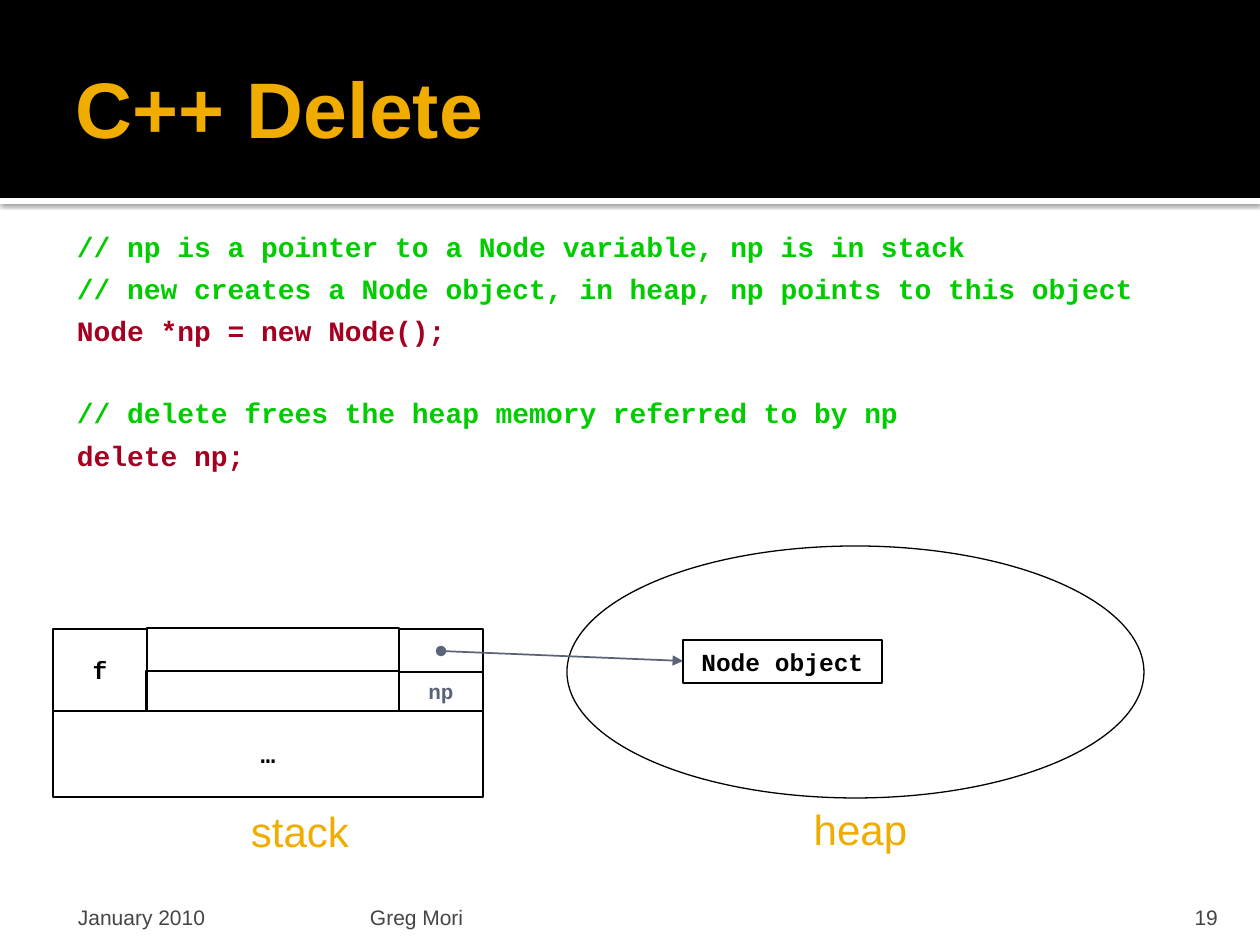
from dataclasses import dataclass
from typing import Optional

import pptx
import pptx.dml.color
import pptx.enum.shapes
import pptx.enum.text
import pptx.oxml
import pptx.oxml.ns
import pptx.util

PX = 914400 / 126
SHAPE = pptx.enum.shapes.MSO_SHAPE
ALIGN = pptx.enum.text.PP_ALIGN
ANCHOR = pptx.enum.text.MSO_ANCHOR
NS = pptx.oxml.ns.nsdecls("a")


@dataclass(frozen=True)
class Theme:
    black: str = "000000"
    white: str = "FFFFFF"
    gold: str = "F0AD00"
    slate: str = "5A6378"
    grey: str = "454545"
    comment: str = "00CC00"
    code: str = "A50021"
    sans: str = "Arial"
    mono: str = "Courier New"
    title_size: int = 45
    label_size: int = 24
    code_size: int = 16
    cell_size: int = 14
    small_size: int = 12


THEME = Theme()


@dataclass(frozen=True)
class Area:
    left: int
    top: int
    width: int
    height: int

    def emu(self) -> list:
        return [px(n) for n in (self.left, self.top, self.width, self.height)]


@dataclass(frozen=True)
class Style:
    size: int
    color: str
    font: str = THEME.sans
    bold: bool = False


@dataclass(frozen=True)
class Cell:
    area: Area
    text: str = ""
    style: Style = Style(THEME.cell_size, THEME.black, THEME.mono, True)
    fill: Optional[str] = None
    kind: SHAPE = SHAPE.RECTANGLE


@dataclass(frozen=True)
class Label:
    area: Area
    text: str
    style: Style
    align: ALIGN = ALIGN.LEFT
    anchor: ANCHOR = ANCHOR.TOP
    insets: tuple = (13, 6, 13, 6)


@dataclass(frozen=True)
class CodeLine:
    text: str
    color: str
    before: float = 0


def px(count: int) -> int:
    return round(count * PX)


def rgb(value: str) -> pptx.dml.color.RGBColor:
    return pptx.dml.color.RGBColor.from_string(value)


def add_span(para, text: str, style: Style) -> None:
    span = para.add_run()
    span.text = text
    span.font.size = pptx.util.Pt(style.size)
    span.font.name = style.font
    span.font.bold = style.bold
    span.font.color.rgb = rgb(style.color)


def set_frame(box, insets: tuple, anchor: ANCHOR) -> None:
    frame = box.text_frame
    frame.word_wrap = True
    frame.auto_size = pptx.enum.text.MSO_AUTO_SIZE.NONE
    frame.vertical_anchor = anchor
    (frame.margin_left, frame.margin_top,
     frame.margin_right, frame.margin_bottom) = map(px, insets)


def place(box, area: Area) -> None:
    box.left, box.top, box.width, box.height = area.emu()


def add_band(page, area: Area, color: str):
    """Add a header band behind the placeholders."""
    band = page.shapes.add_shape(SHAPE.RECTANGLE, *area.emu())
    band.shadow.inherit = False
    band.fill.solid()
    band.fill.fore_color.rgb = rgb(color)
    band.line.fill.background()
    band.element.getparent().insert(2, band.element)
    return band


def add_cell(page, cell: Cell) -> None:
    box = page.shapes.add_shape(cell.kind, *cell.area.emu())
    box.shadow.inherit = False
    if cell.fill:
        box.fill.solid()
        box.fill.fore_color.rgb = rgb(cell.fill)
    else:
        box.fill.background()
    box.line.color.rgb = rgb(THEME.black)
    box.line.width = pptx.util.Pt(0.75)
    if cell.text:
        set_frame(box, (6, 6, 6, 6), ANCHOR.MIDDLE)
        para = box.text_frame.paragraphs[0]
        para.alignment = ALIGN.CENTER
        add_span(para, cell.text, cell.style)


def add_label(page, label: Label) -> None:
    box = page.shapes.add_textbox(*label.area.emu())
    set_frame(box, label.insets, label.anchor)
    para = box.text_frame.paragraphs[0]
    para.alignment = label.align
    add_span(para, label.text, label.style)


def add_pointer(page, start: tuple, end: tuple) -> None:
    arrow = page.shapes.add_connector(
        pptx.enum.shapes.MSO_CONNECTOR.STRAIGHT, *map(px, start + end))
    arrow.line.color.rgb = rgb(THEME.slate)
    arrow.line.width = pptx.util.Pt(1)
    line = arrow.line._get_or_add_ln()
    for tag, kind in (("headEnd", "oval"), ("tailEnd", "triangle")):
        line.append(pptx.oxml.parse_xml(f'<a:{tag} {NS} type="{kind}"/>'))
    arrow.element.spPr.append(pptx.oxml.parse_xml(f"<a:effectLst {NS}/>"))


def fill_code(box, lines: list) -> None:
    for index, line in enumerate(lines):
        frame = box.text_frame
        para = frame.add_paragraph() if index else frame.paragraphs[0]
        para.line_spacing = 0.9
        para.space_before = pptx.util.Pt(line.before)
        para.space_after = pptx.util.Pt(6.8)
        props = para._p.get_or_add_pPr()
        props.set("marL", str(px(60)))
        props.set("indent", str(-px(44)))
        props.append(pptx.oxml.parse_xml(f"<a:buNone {NS}/>"))
        add_span(para, line.text, Style(THEME.code_size, line.color, THEME.mono, True))


CODE = [
    CodeLine("// np is a pointer to a Node variable, np is in stack", THEME.comment),
    CodeLine("// new creates a Node object, in heap, np points to this object", THEME.comment),
    CodeLine("Node *np = new Node();", THEME.code),
    CodeLine("// delete frees the heap memory referred to by np", THEME.comment, 23.1),
    CodeLine("delete np;", THEME.code),
]
CELLS = [
    Cell(Area(399, 672, 84, 39), "np", Style(THEME.small_size, THEME.slate, THEME.mono, True)),
    Cell(Area(53, 629, 94, 82), "f"),
    Cell(Area(53, 711, 430, 86), "…"),
    Cell(Area(567, 546, 577, 252), kind=SHAPE.OVAL),
    Cell(Area(399, 629, 84, 43), fill=THEME.white),
    Cell(Area(146, 671, 253, 40)),
    Cell(Area(147, 628, 252, 43)),
]
TARGET = Cell(Area(683, 640, 199, 43), "Node object", fill=THEME.white)
REGION = Style(THEME.label_size, THEME.gold)
FOOTER = Style(THEME.small_size, THEME.grey)
LABELS = [
    Label(Area(116, 800, 368, 63), "stack", REGION, ALIGN.CENTER),
    Label(Area(577, 798, 567, 64), "heap", REGION, ALIGN.CENTER),
    Label(Area(63, 892, 294, 38), "January 2010", FOOTER, ALIGN.LEFT, ANCHOR.BOTTOM, (15, 6, 6, 0)),
    Label(Area(364, 892, 759, 38), "Greg Mori", FOOTER, ALIGN.LEFT, ANCHOR.BOTTOM, (6, 6, 6, 0)),
    Label(Area(1130, 892, 101, 38), "19", FOOTER, ALIGN.RIGHT, ANCHOR.BOTTOM, (13, 6, 13, 0)),
]


def main() -> None:
    deck = pptx.Presentation()
    deck.slide_width, deck.slide_height = px(1260), px(945)
    page = deck.slides.add_slide(deck.slide_layouts[1])

    # Header: black band over a white strip with a soft shadow
    add_band(page, Area(0, 0, 1260, 198), THEME.black)
    strip = add_band(page, Area(0, 198, 1260, 6), THEME.white)
    strip.element.spPr.find(pptx.oxml.ns.qn("a:effectLst")).append(pptx.oxml.parse_xml(
        f'<a:outerShdw {NS} blurRad="31750" dist="10160" dir="5400000">'
        f'<a:srgbClr val="{THEME.black}"><a:alpha val="60000"/></a:srgbClr></a:outerShdw>'))

    # Title and code
    title, body = page.shapes.title, page.placeholders[1]
    place(title, Area(63, 21, 1134, 173))
    set_frame(title, (13, 6, 6, 6), ANCHOR.MIDDLE)
    heading = title.text_frame.paragraphs[0]
    heading.alignment = ALIGN.LEFT
    add_span(heading, "C++ Delete", Style(THEME.title_size, THEME.gold, bold=True))
    place(body, Area(53, 220, 1113, 388))
    set_frame(body, (8, 13, 13, 6), ANCHOR.TOP)
    fill_code(body, CODE)

    # Memory diagram, its labels and the footer
    for cell in CELLS:
        add_cell(page, cell)
    add_pointer(page, (441, 651), (683, 661))
    add_cell(page, TARGET)
    for label in LABELS:
        add_label(page, label)

    deck.save("out.pptx")


if __name__ == "__main__":
    main()
